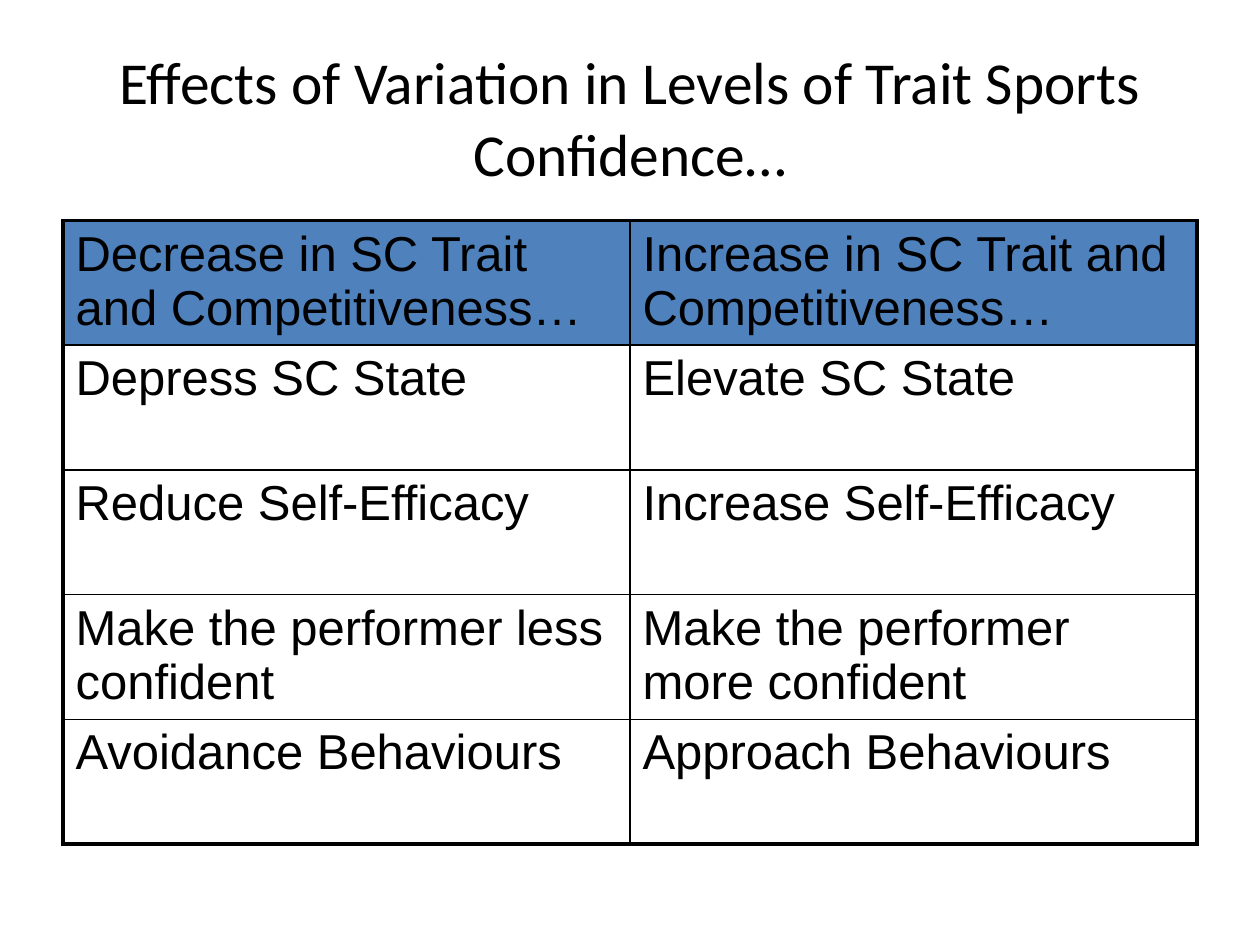
"""Build a slide comparing decreased and increased trait sports confidence."""
import pptx
import pptx.dml.color
import pptx.enum.text
import pptx.oxml
import pptx.oxml.ns
import pptx.util

BLACK = pptx.dml.color.RGBColor(0x00, 0x00, 0x00)
WHITE = pptx.dml.color.RGBColor(0xFF, 0xFF, 0xFF)
BLUE = pptx.dml.color.RGBColor(0x4F, 0x81, 0xBD)
NS = pptx.oxml.ns.nsdecls("a")
MARGIN = 0.05
OUTER, INNER = 2.25, 1
TITLE = "Effects of Variation in Levels of Trait Sports Confidence…"
ROWS = [
    ("Decrease in SC Trait and Competitiveness…", "Increase in SC Trait and Competitiveness…"),
    ("Depress SC State", "Elevate SC State"),
    ("Reduce Self-Efficacy", "Increase Self-Efficacy"),
    ("Make the performer less confident", "Make the performer more confident"),
    ("Avoidance Behaviours", "Approach Behaviours"),
]


def set_font(p, name, size):
    p.font.name = name
    p.font.size = pptx.util.Pt(size)
    p.font.color.rgb = BLACK


def add_title(s, prs):
    title = s.shapes.title
    title.left, title.top = int(prs.slide_width * MARGIN), int(prs.slide_height * 0.04)
    title.width, title.height = int(prs.slide_width * (1 - 2 * MARGIN)), pptx.util.Inches(1.25)
    tf = title.text_frame
    tf.text = TITLE
    tf.vertical_anchor = pptx.enum.text.MSO_ANCHOR.MIDDLE
    p = tf.paragraphs[0]
    p.alignment = pptx.enum.text.PP_ALIGN.CENTER
    set_font(p, "Calibri", 34)


def set_border(cell, side, width):
    cell._tc.get_or_add_tcPr().append(pptx.oxml.parse_xml(
        f'<a:ln{side} {NS} w="{pptx.util.Pt(width)}"><a:solidFill>'
        f'<a:srgbClr val="{BLACK}"/></a:solidFill></a:ln{side}>'))


def fill_cell(cell, text, fill, edges):
    cell.text = text
    p = cell.text_frame.paragraphs[0]
    set_font(p, "Arial", 28)
    p._p.get_or_add_pPr().insert(0, pptx.oxml.parse_xml(
        f'<a:spcBef {NS}><a:spcPct val="20000"/></a:spcBef>'))
    for side, is_outer in edges.items():
        set_border(cell, side, OUTER if is_outer else INNER)
    cell.fill.solid()
    cell.fill.fore_color.rgb = fill


def add_comparison(s, prs):
    n_rows, n_cols = len(ROWS), len(ROWS[0])
    table = s.shapes.add_table(
        n_rows, n_cols, int(prs.slide_width * MARGIN), pptx.util.Inches(1.75),
        int(prs.slide_width * (1 - 2 * MARGIN)), pptx.util.Inches(0.99 * n_rows)).table
    for i, row in enumerate(ROWS):
        for j, text in enumerate(row):
            edges = {"L": j == 0, "R": j == n_cols - 1, "T": i == 0, "B": i == n_rows - 1}
            fill_cell(table.cell(i, j), text, BLUE if i == 0 else WHITE, edges)


def main():
    prs = pptx.Presentation()
    prs.slide_width, prs.slide_height = pptx.util.Inches(10), pptx.util.Inches(7.5)
    s = prs.slides.add_slide(prs.slide_layouts[5])
    add_title(s, prs)
    add_comparison(s, prs)
    prs.save("out.pptx")


if __name__ == "__main__":
    main()
